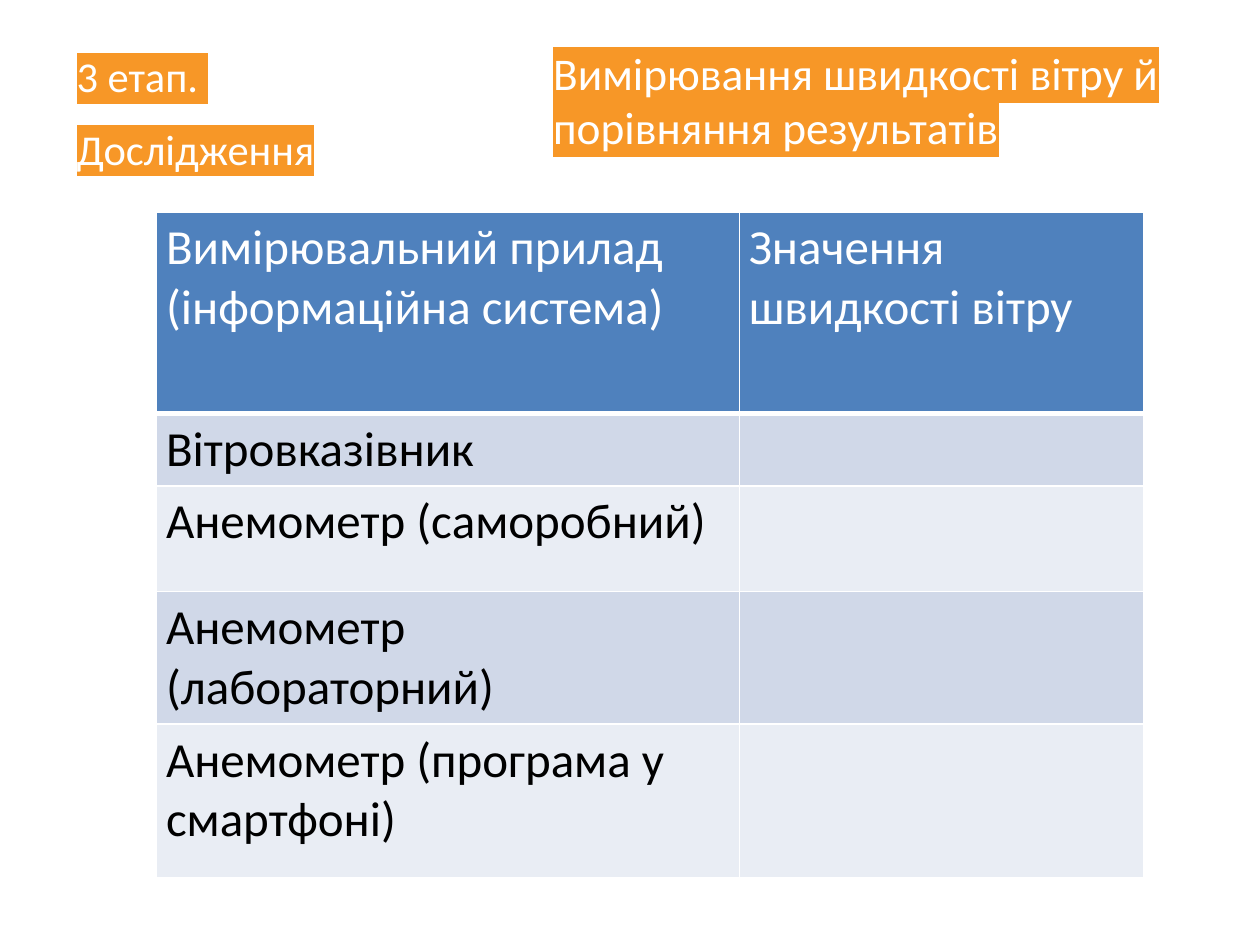
from pptx import Presentation
from pptx.dml.color import RGBColor
from pptx.enum.text import MSO_ANCHOR
from pptx.oxml import parse_xml
from pptx.oxml.ns import nsdecls
from pptx.util import Pt

TOP = MSO_ANCHOR.TOP
FONT = "Calibri"
COLORS = {
    "white": "FFFFFF",
    "black": "000000",
    "orange": "F79727",
    "header": "4F81BD",
    "band_dark": "D0D8E8",
    "band_light": "E9EDF4",
}


def add_text(p, text, size, color, highlight=None):
    r = p.add_run()
    r.text = text
    r.font.size = Pt(size)
    r.font.bold = False
    r.font.color.rgb = RGBColor.from_string(COLORS[color])
    if highlight:
        r.font._element.append(parse_xml(
            f'<a:highlight {nsdecls("a")}>'
            f'<a:srgbClr val="{COLORS[highlight]}"/></a:highlight>'))
    r.font.name = FONT


prs = Presentation()
prs.slide_width, prs.slide_height = Pt(720), Pt(540)
s = prs.slides.add_slide(prs.slide_layouts[6])

# Table of instruments and wind speeds
rows = [
    (["Вимірювальний прилад", "(інформаційна система)"], 115.2),
    (["Вітровказівник"], 37.4),
    (["Анемометр (саморобний)"], 60.5),
    (["Анемометр (лабораторний)"], 60.5),
    (["Анемометр (програма у смартфоні)"], 87.8),
]
col_widths = [333, 231]
table = s.shapes.add_table(len(rows), 2, Pt(89.5), Pt(121), Pt(564),
                           Pt(sum(h for _, h in rows))).table
for col, width in zip(table.columns, col_widths):
    col.width = Pt(width)

for i, (label, height) in enumerate(rows):
    table.rows[i].height = Pt(height)
    fill = "header" if i == 0 else ("band_dark" if i % 2 else "band_light")
    value = ["Значення швидкості вітру"] if i == 0 else []
    for j, lines in enumerate([label, value]):
        cell = table.cell(i, j)
        cell.margin_left = cell.margin_right = Pt(5.4)
        cell.margin_top = cell.margin_bottom = Pt(3.6)
        cell.fill.solid()
        cell.fill.fore_color.rgb = RGBColor.from_string(COLORS[fill])
        tf = cell.text_frame
        for k, line in enumerate(lines):
            p = tf.add_paragraph() if k else tf.paragraphs[0]
            add_text(p, line, 28, "black" if i else "white")
        # White cell borders, thicker under the header
        tc_pr = cell._tc.get_or_add_tcPr()
        for n, side in enumerate("LRTB"):
            width = Pt(3 if i == 0 and side == "B" else 1)
            tc_pr.insert(n, parse_xml(
                f'<a:ln{side} {nsdecls("a")} w="{width}"><a:solidFill>'
                f'<a:srgbClr val="{COLORS["white"]}"/></a:solidFill></a:ln{side}>'))

# Highlighted headings: place, insets (left, top, right), size, spacing, text
headings = [
    ((281.5, 20.9, 388.8, 92.2), (34.6, 4.8, 5), 25.9, 1.0, 0,
     ["Вимірювання швидкості вітру й порівняння результатів"]),
    ((36.7, 28.8, 254.9, 104.4), (7.2, 8, 7.2), 24.3, 0.7, 20.8,
     ["3 етап. ", "Дослідження"]),
]
for place, insets, size, line_spacing, gap, lines in headings:
    tf = s.shapes.add_textbox(*map(Pt, place)).text_frame
    tf.word_wrap = True
    tf.vertical_anchor = TOP
    tf.margin_left, tf.margin_top, tf.margin_right = map(Pt, insets)
    for k, line in enumerate(lines):
        p = tf.add_paragraph() if k else tf.paragraphs[0]
        p.line_spacing = line_spacing
        if k:
            p.space_before = Pt(gap)
        add_text(p, line, size, "white", highlight="orange")

prs.save("out.pptx")
